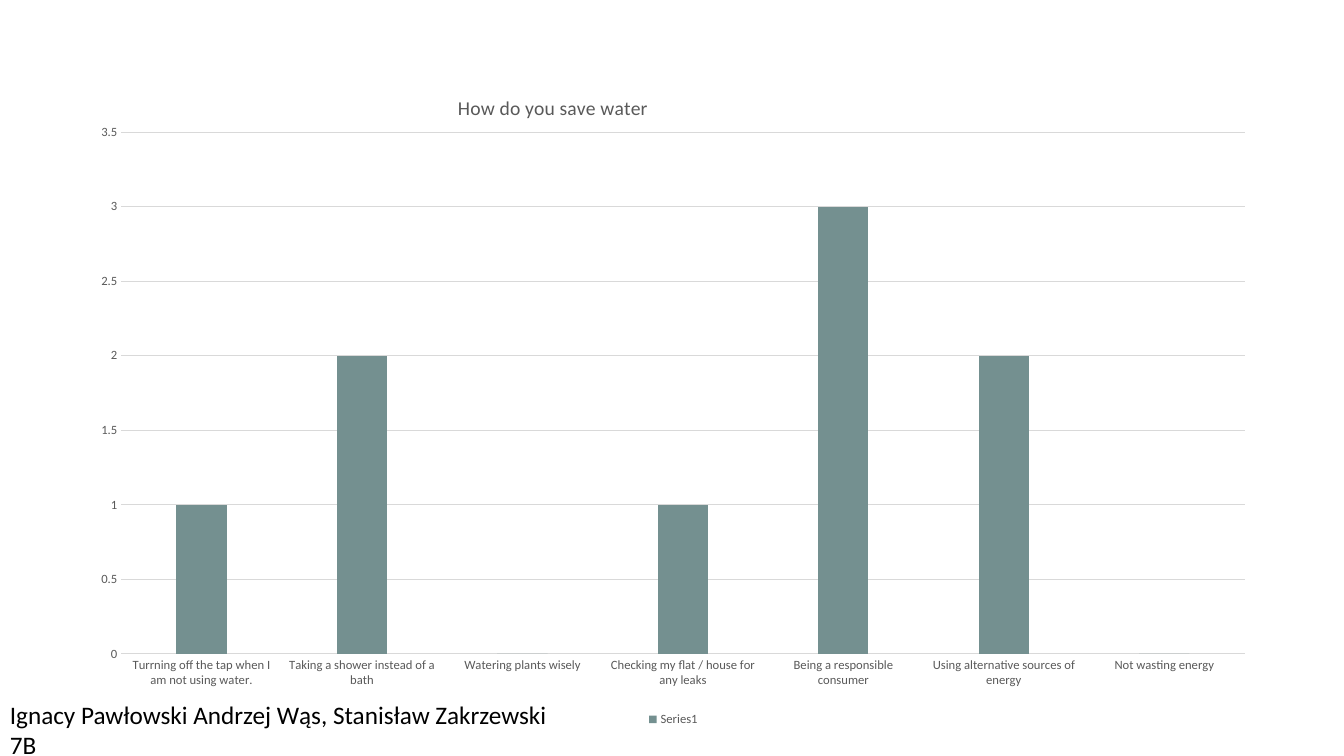
from lxml import etree
from pptx import Presentation
from pptx.chart.data import CategoryChartData as Data
from pptx.dml.color import RGBColor
from pptx.enum.chart import XL_CHART_TYPE as Kind, XL_LEGEND_POSITION as Pos, XL_TICK_MARK as Tick
from pptx.oxml.ns import qn
from pptx.util import Pt

GREY, RULE, TEAL, BLACK = "595959", "D9D9D9", "749090", "000000"
ANSWERS = {
    "Turrning off the tap when I am not using water.": 1,
    "Taking a shower instead of a bath": 2,
    "Watering plants wisely": 0,
    "Checking my flat / house for any leaks": 1,
    "Being a responsible consumer": 3,
    "Using alternative sources of energy": 2,
    "Not wasting energy": 0,
}


def color(text):
    return RGBColor.from_string(text)


def place(node, index, **parts):
    """Give a chart part a fixed layout, in fractions of the chart."""
    for old in node.findall(qn("c:layout")):
        node.remove(old)
    layout = etree.Element(qn("c:layout"))
    node.insert(index, layout)
    manual = etree.SubElement(layout, qn("c:manualLayout"))
    for tag, val in parts.items():
        etree.SubElement(manual, qn("c:" + tag)).set("val", str(val))


class Page:
    face = "Calibri"

    def __init__(self, slide):
        self.slide = slide

    def font(self, font, size, tone):
        font.name, font.size, font.bold = self.face, Pt(size), False
        font.color.rgb = color(tone)

    def text(self, lines, box, size):
        frame = self.slide.shapes.add_textbox(*map(Pt, box)).text_frame
        frame.word_wrap = True
        frame.text = "\n".join(lines)
        for par in frame.paragraphs:
            self.font(par.font, size, BLACK)

    def axis(self, axis):
        axis.major_tick_mark = axis.minor_tick_mark = Tick.NONE
        self.font(axis.tick_labels.font, 9, GREY)

    def rule(self, line):
        line.color.rgb, line.width = color(RULE), Pt(0.75)

    def columns(self, title, values, box):
        data = Data()
        data.categories = list(values)
        data.add_series("Series1", list(values.values()))
        chart = self.slide.shapes.add_chart(
            Kind.COLUMN_CLUSTERED, *map(Pt, box), data).chart
        self.font(chart.font, 10, BLACK)

        head = chart.chart_title
        head.text_frame.text = title
        self.font(head.text_frame.paragraphs[0].font, 14, GREY)
        place(head._element, 1, xMode="edge", yMode="edge", x=0.316, y=0.05)

        plot = chart.plots[0]
        plot.gap_width, plot.overlap = 219, -27
        plot.vary_by_categories = False
        fill = plot.series[0].format.fill
        fill.solid()
        fill.fore_color.rgb = color(TEAL)
        place(plot._element.getparent(), 0, layoutTarget="inner",
              xMode="edge", yMode="edge", x=0.036, y=0.111, w=0.944, h=0.775)

        cats, vals = chart.category_axis, chart.value_axis
        self.axis(cats)
        self.axis(vals)
        self.rule(cats.format.line)
        self.rule(vals.major_gridlines.format.line)
        vals.format.line.fill.background()
        vals.minimum_scale, vals.maximum_scale, vals.major_unit = 0, 3.5, 0.5

        chart.has_legend = True
        chart.legend.position = Pos.BOTTOM
        chart.legend.include_in_layout = False
        self.font(chart.legend.font, 9, GREY)


def main():
    deck = Presentation()
    deck.slide_width, deck.slide_height = Pt(960), Pt(540)
    page = Page(deck.slides.add_slide(deck.slide_layouts[6]))
    page.columns("How do you save water", ANSWERS, (56, 41, 850, 481))
    page.text(["Ignacy Pawłowski\u00a0Andrzej Wąs, Stanisław Zakrzewski", "7B"],
              (0, 496, 811, 51), 18)
    deck.save("out.pptx")


if __name__ == "__main__":
    main()
